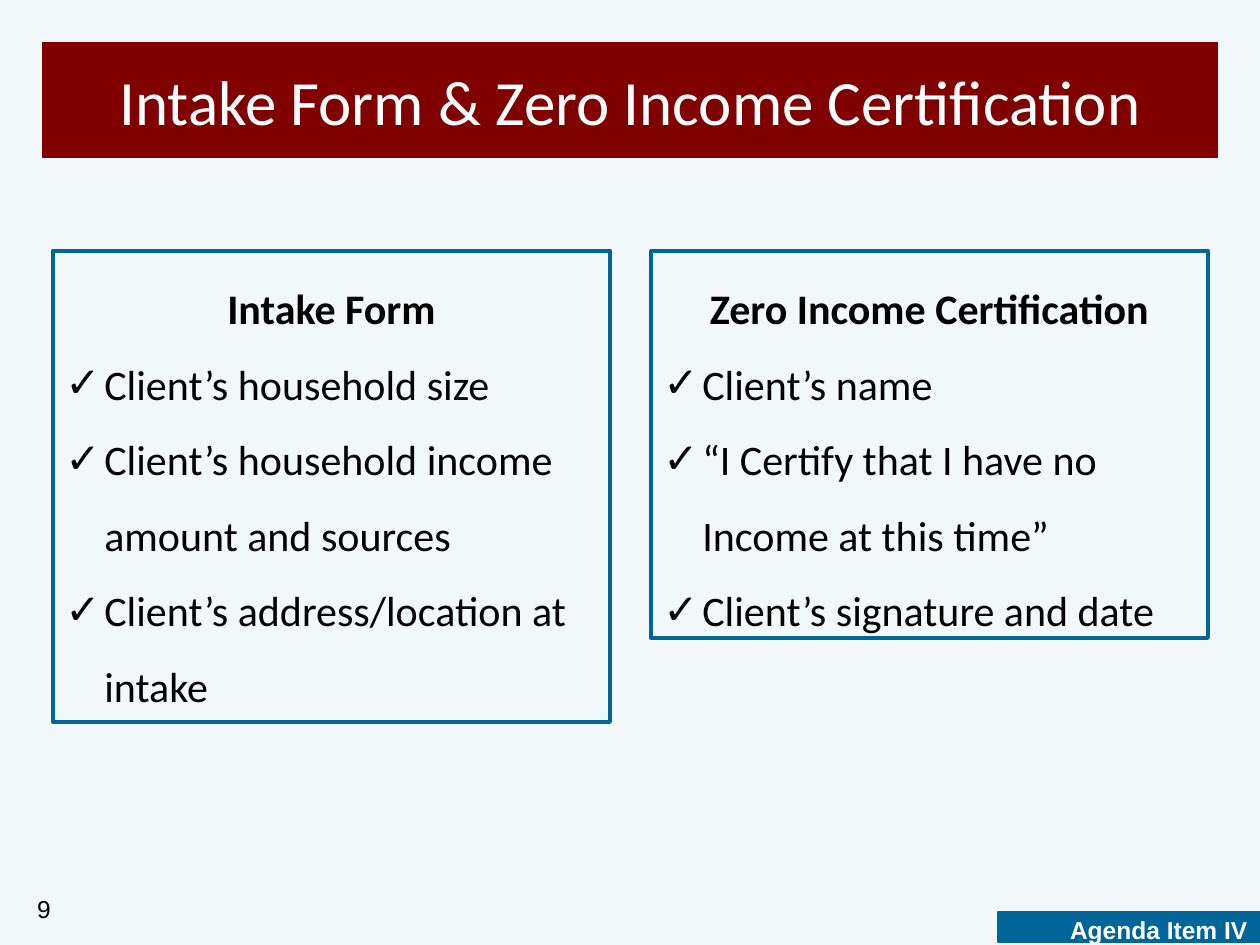
from dataclasses import dataclass

from lxml import etree
from pptx import Presentation
from pptx.dml.color import RGBColor
from pptx.enum.shapes import MSO_SHAPE
from pptx.enum.text import MSO_ANCHOR, PP_ALIGN
from pptx.oxml.ns import qn
from pptx.shapes.autoshape import Shape
from pptx.slide import Slide
from pptx.text.text import _Paragraph
from pptx.util import Emu, Pt

RECTANGLE = MSO_SHAPE.RECTANGLE
TOP, MIDDLE = MSO_ANCHOR.TOP, MSO_ANCHOR.MIDDLE
LEFT, CENTER, RIGHT = PP_ALIGN.LEFT, PP_ALIGN.CENTER, PP_ALIGN.RIGHT
PX_PER_INCH = 126
TITLE_ONLY_LAYOUT = 5


@dataclass(frozen=True)
class Theme:
    """Colours, fonts and type sizes of the slide."""
    background: RGBColor = RGBColor(0xF2, 0xF8, 0xFA)
    banner: RGBColor = RGBColor(0x80, 0x00, 0x00)
    accent: RGBColor = RGBColor(0x00, 0x66, 0x99)
    light: RGBColor = RGBColor(0xFF, 0xFF, 0xFF)
    dark: RGBColor = RGBColor(0x00, 0x00, 0x00)
    body_font: str = "Calibri"
    footer_font: str = "Arial"
    title_size: int = 36
    body_size: int = 24
    footer_size: int = 14


@dataclass(frozen=True)
class Box:
    """Position and size in px."""
    left: int
    top: int
    width: int
    height: int


@dataclass(frozen=True)
class Checklist:
    """A bordered panel with a heading and checked items."""
    box: Box
    heading: str
    items: tuple[str, ...]


@dataclass(frozen=True)
class TextStyle:
    """Look of one run of text."""
    font: str
    size: int
    color: RGBColor
    bold: bool = False


THEME = Theme()
TITLE_BOX = Box(42, 42, 1176, 116)
AGENDA_BOX = Box(998, 912, 262, 30)
NUMBER_BOX = Box(-21, 888, 84, 47)
HANGING_INDENT = 39
CHECKLISTS = (
    Checklist(Box(53, 251, 557, 471), "Intake Form", (
        "Client’s household size",
        "Client’s household income amount and sources",
        "Client’s address/location at intake",
    )),
    Checklist(Box(651, 251, 557, 387), "Zero Income Certification", (
        "Client’s name",
        "“I Certify that I have no Income at this time”",
        "Client’s signature and date",
    )),
)


def px(length: int) -> Emu:
    """Turn px into EMU."""
    return Emu(round(length * 914400 / PX_PER_INCH))


def edges(box: Box) -> tuple[Emu, Emu, Emu, Emu]:
    """Return the box as EMU lengths."""
    return px(box.left), px(box.top), px(box.width), px(box.height)


def write(paragraph: _Paragraph, text: str, style: TextStyle,
          alignment: PP_ALIGN, line_spacing: float = 1.0) -> None:
    """Add one styled run to a paragraph."""
    paragraph.alignment = alignment
    paragraph.line_spacing = line_spacing
    run = paragraph.add_run()
    run.text = text
    run.font.name = style.font
    run.font.size = Pt(style.size)
    run.font.bold = style.bold
    run.font.color.rgb = style.color


def add_check_bullet(paragraph: _Paragraph) -> None:
    """Give a paragraph a hanging check mark."""
    properties = paragraph._p.get_or_add_pPr()
    properties.set("marL", str(px(HANGING_INDENT)))
    properties.set("indent", str(-px(HANGING_INDENT)))
    etree.SubElement(properties, qn("a:buFont")).set("typeface", THEME.footer_font)
    etree.SubElement(properties, qn("a:buChar")).set("char", "✓")


def add_rectangle(slide: Slide, box: Box, line_width: float) -> Shape:
    """Add an unfilled rectangle with an accent border."""
    shape = slide.shapes.add_shape(RECTANGLE, *edges(box))
    shape.shadow.inherit = False
    shape.fill.background()
    shape.line.color.rgb = THEME.accent
    shape.line.width = Pt(line_width)
    shape.text_frame.word_wrap = True
    shape.text_frame.vertical_anchor = TOP
    return shape


def add_title(slide: Slide) -> None:
    """Turn the title placeholder into the banner."""
    title = slide.shapes.title
    title.left, title.top, title.width, title.height = edges(TITLE_BOX)
    title.fill.solid()
    title.fill.fore_color.rgb = THEME.banner
    title.text_frame.vertical_anchor = MIDDLE
    write(title.text_frame.paragraphs[0], "Intake Form & Zero Income Certification",
          TextStyle(THEME.body_font, THEME.title_size, THEME.light), CENTER)


def add_checklist(slide: Slide, checklist: Checklist) -> None:
    """Draw one checklist panel."""
    frame = add_rectangle(slide, checklist.box, 2.25).text_frame
    heading_style = TextStyle(THEME.body_font, THEME.body_size, THEME.dark, True)
    item_style = TextStyle(THEME.body_font, THEME.body_size, THEME.dark)
    write(frame.paragraphs[0], checklist.heading, heading_style, CENTER, 1.5)
    for item in checklist.items:
        paragraph = frame.add_paragraph()
        write(paragraph, item, item_style, LEFT, 1.5)
        add_check_bullet(paragraph)


def add_footer(slide: Slide) -> None:
    """Add the agenda tag and the page number."""
    agenda = add_rectangle(slide, AGENDA_BOX, 0.75)
    agenda.fill.solid()
    agenda.fill.fore_color.rgb = THEME.accent
    write(agenda.text_frame.paragraphs[0], "Agenda Item IV",
          TextStyle(THEME.footer_font, THEME.footer_size, THEME.light, True), RIGHT, 0.9)
    number = slide.shapes.add_textbox(*edges(NUMBER_BOX))
    number.text_frame.word_wrap = True
    write(number.text_frame.paragraphs[0], "9",
          TextStyle(THEME.footer_font, THEME.footer_size, THEME.dark), RIGHT)


def main() -> None:
    """Build and save the slide."""
    presentation = Presentation()
    presentation.slide_width, presentation.slide_height = px(1260), px(945)
    slide = presentation.slides.add_slide(presentation.slide_layouts[TITLE_ONLY_LAYOUT])
    slide.background.fill.solid()
    slide.background.fill.fore_color.rgb = THEME.background
    add_title(slide)
    for checklist in CHECKLISTS:
        add_checklist(slide, checklist)
    add_footer(slide)
    presentation.save("out.pptx")


if __name__ == "__main__":
    main()
